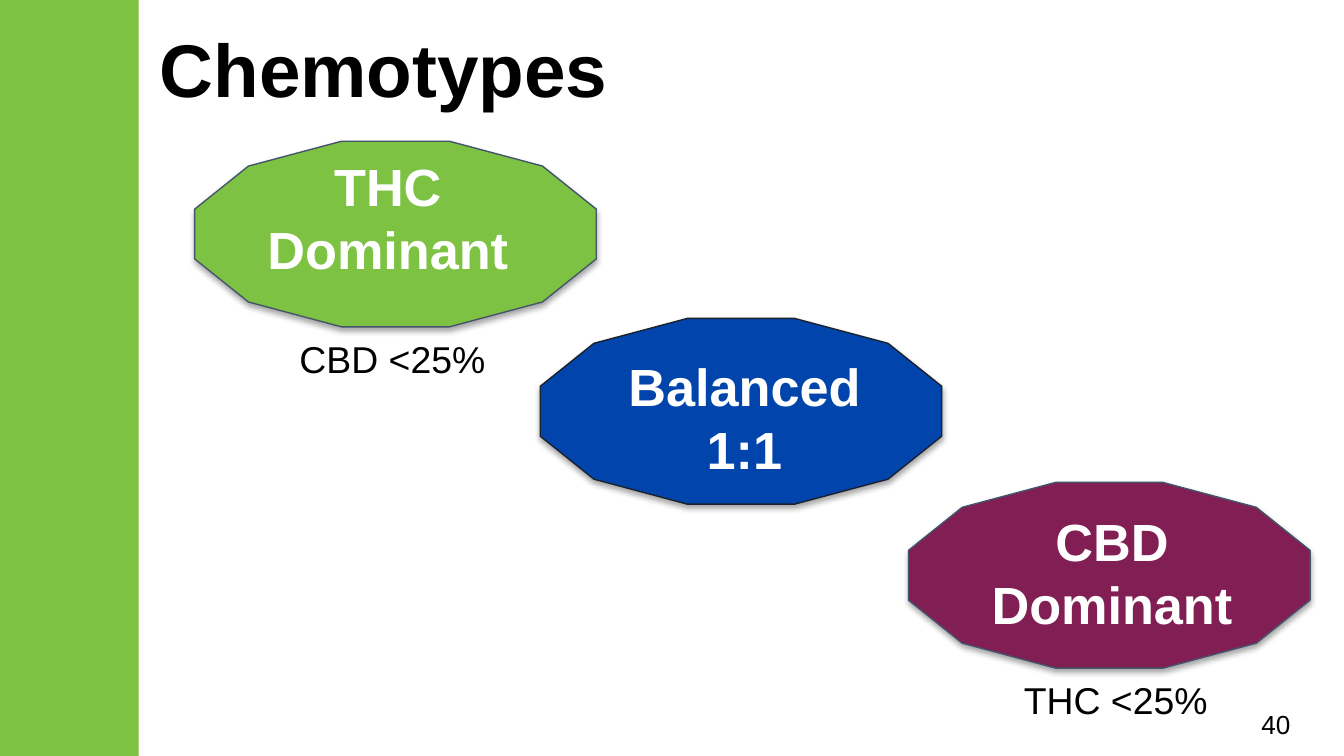
import lxml.etree
import pptx
import pptx.dml.color
import pptx.enum.shapes
import pptx.enum.text
import pptx.oxml.ns
import pptx.util

Cm = pptx.util.Cm
Pt = pptx.util.Pt
qn = pptx.oxml.ns.qn
RGBColor = pptx.dml.color.RGBColor
Align = pptx.enum.text.PP_ALIGN
Anchor = pptx.enum.text.MSO_ANCHOR
Shape = pptx.enum.shapes.MSO_SHAPE

BLACK = RGBColor(0x00, 0x00, 0x00)
WHITE = RGBColor(0xFF, 0xFF, 0xFF)
GREEN = RGBColor(0x7D, 0xC2, 0x43)
BLUE = RGBColor(0x01, 0x45, 0xAC)
PLUM = RGBColor(0x81, 0x1E, 0x54)
SLATE = RGBColor(0x44, 0x54, 0x6A)
INK = RGBColor(0x1B, 0x21, 0x2C)

TITLE = {"size": Pt(40), "bold": True}
LABEL = {"size": Pt(28), "bold": True}
CAPTION = {"size": Pt(20), "bold": False}
NUMBER = {"size": Pt(14), "bold": False}


def write(box, lines, font, color, align, anchor, inset):
    """Fill a box with one paragraph, its lines parted by line breaks."""
    frame = box.text_frame
    settings = {
        "word_wrap": True,
        "auto_size": pptx.enum.text.MSO_AUTO_SIZE.NONE,
        "vertical_anchor": anchor,
        "margin_left": Cm(inset[0]),
        "margin_right": Cm(inset[0]),
        "margin_top": Cm(inset[1]),
        "margin_bottom": Cm(inset[1]),
    }
    for name, value in settings.items():
        setattr(frame, name, value)
    para = frame.paragraphs[0]
    para.alignment = align
    for index, line in enumerate(lines):
        if index:
            para.add_line_break()
        span = para.add_run()
        span.text = line
        for name, value in {"name": "Arial", **font}.items():
            setattr(span.font, name, value)
        span.font.color.rgb = color


def add_soft_shadow(shape):
    effects = shape._element.spPr.find(qn("a:effectLst"))
    shadow = lxml.etree.SubElement(
        effects, qn("a:outerShdw"), blurRad=str(Pt(3.1)), dist=str(Pt(1.8)),
        dir="5400000", rotWithShape="0")
    color = lxml.etree.SubElement(shadow, qn("a:srgbClr"), val=str(BLACK))
    lxml.etree.SubElement(color, qn("a:alpha"), val="35000")


deck = pptx.Presentation()
deck.slide_width, deck.slide_height = Cm(25.4), Cm(14.29)
page = deck.slides.add_slide(deck.slide_layouts[5])

# Side band, placed behind the title
band = page.shapes.add_shape(Shape.RECTANGLE, 0, 0, Cm(2.62), deck.slide_height)
band.shadow.inherit = False
band.fill.solid()
band.fill.fore_color.rgb = GREEN
band.line.fill.background()
page.shapes.title._element.addprevious(band._element)

title = page.shapes.title
place = {"left": 2.77, "top": 0.48, "width": 21.64, "height": 1.6}
for name, value in place.items():
    setattr(title, name, Cm(value))
write(title, ["Chemotypes"], TITLE, BLACK, Align.LEFT, Anchor.MIDDLE, (0.25, 0.25))

# Chemotype shapes: left, top, fill, outline
for left, top, fill, outline in [
    (10.21, 6.02, BLUE, INK),
    (3.68, 2.67, GREEN, SLATE),
    (17.17, 9.12, PLUM, SLATE),
]:
    chemotype = page.shapes.add_shape(
        Shape.DODECAGON, Cm(left), Cm(top), Cm(7.59), Cm(3.51))
    chemotype.shadow.inherit = False
    add_soft_shadow(chemotype)
    chemotype.fill.solid()
    chemotype.fill.fore_color.rgb = fill
    chemotype.line.color.rgb = outline
    chemotype.line.width = Pt(0.75)

# Labels on the shapes: left, top, width, lines
for left, top, width, lines in [
    (4.55, 2.82, 5.56, ["THC Dominant"]),
    (11.43, 6.6, 5.28, ["Balanced", "1:1"]),
    (18.49, 9.53, 5.05, ["CBD Dominant"]),
]:
    label = page.shapes.add_textbox(Cm(left), Cm(top), Cm(width), Cm(2.59))
    write(label, lines, LABEL, WHITE, Align.CENTER, Anchor.TOP, (0.18, 0.1))

# Captions under the shapes
for left, top, text in [(5.41, 6.22, "CBD <25%"), (19.1, 12.67, "THC <25%")]:
    caption = page.shapes.add_textbox(Cm(left), Cm(top), Cm(4.06), Cm(1.12))
    write(caption, [text], CAPTION, BLACK, Align.LEFT, Anchor.TOP, (0.25, 0.13))

number = page.shapes.add_textbox(Cm(22.2), Cm(13.39), Cm(2.44), Cm(0.61))
write(number, ["40"], NUMBER, BLACK, Align.RIGHT, Anchor.MIDDLE, (0.25, 0.13))

deck.save("out.pptx")
